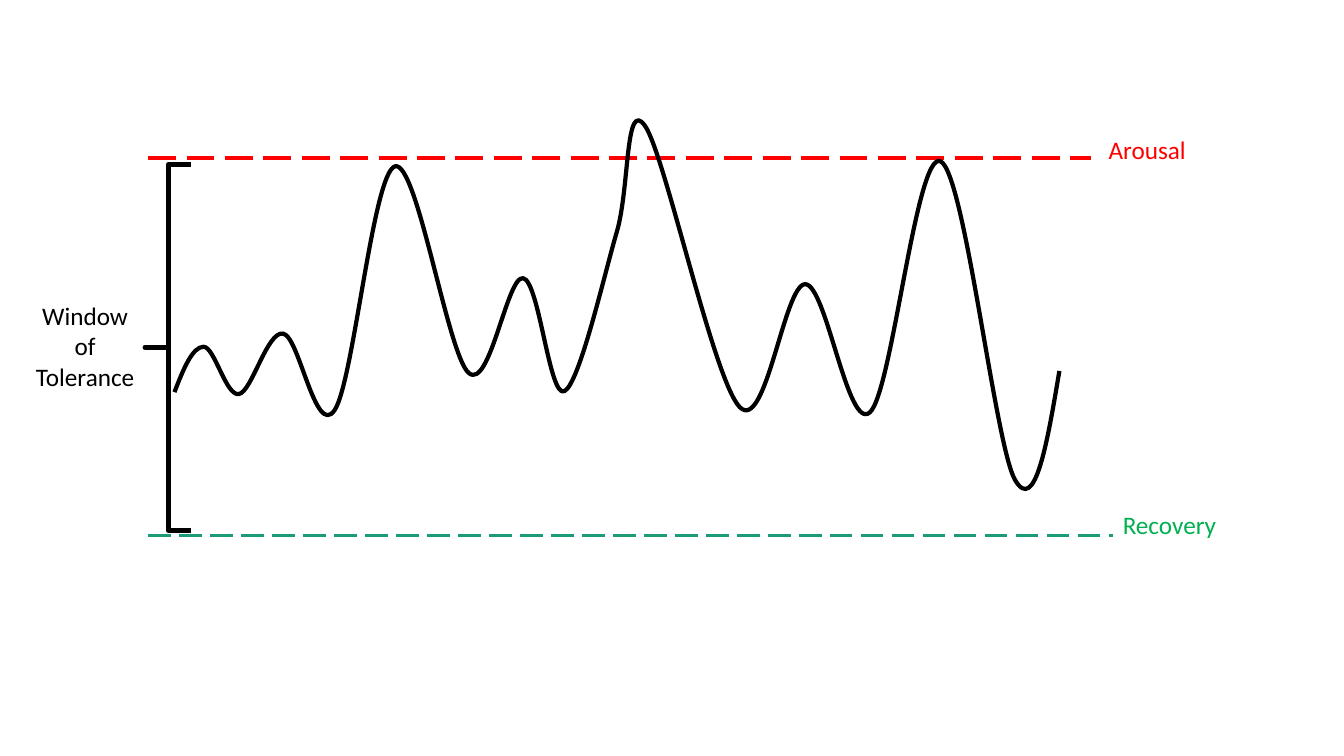
"""Build the window of tolerance slide: two limits, a bracket and an arousal curve."""
from pptx import Presentation
from pptx.dml.color import RGBColor
from pptx.enum.dml import MSO_LINE
from pptx.enum.shapes import MSO_CONNECTOR, MSO_SHAPE
from pptx.enum.text import MSO_AUTO_SIZE, PP_ALIGN
from pptx.oxml.ns import qn
from pptx.util import Pt
from lxml.etree import SubElement

COLORS = {"black": "000000", "red": "FF0000", "teal": "1D9A78", "green": "00B050"}
LIMITS = [
    {"left": 105.8, "right": 779, "y": 113, "color": "red", "width": 2.5},
    {"left": 105.8, "right": 794.9, "y": 382.3, "color": "teal", "width": 2},
]
LABELS = [
    {"text": "Arousal", "area": (784.8, 92.2, 113, 29), "color": "red", "align": PP_ALIGN.LEFT},
    {"text": "Recovery", "area": (794.9, 360, 138.2, 29), "color": "green", "align": PP_ALIGN.LEFT},
    {"text": "Window of Tolerance", "area": (15.8, 211, 90, 72.7), "color": "black",
     "align": PP_ALIGN.CENTER},
]
BRACKET = (103.7, 117.4, 33.1, 261.4)
CURVE_START = (124.6, 280.1)
FIRST_HANDLE = (131, 263.5)
CURVE_TURNS = [
    ((137.5, 247.7), (145.4, 247.7)),
    ((161.3, 283), (170.6, 281.5)),
    ((190.8, 236.2), (202.3, 238.3)),
    ((225.4, 313.2), (239, 293)),
    ((266.4, 123.1), (282.2, 118.8)),
    ((319.7, 253.4), (334.8, 266.4)),
    ((362.2, 196.6), (373.7, 198.7)),
    ((392.4, 285.1), (403.2, 279.4)),
    ((431.3, 197.3), (440.6, 165.6)),
    ((446.4, 69.1), (460.8, 90)),
    ((509.8, 272.2), (528.5, 290.9)),
    ((560.2, 202.3), (575.3, 203)),
    ((605.5, 308.9), (621.4, 294.5)),
    ((654.5, 107.3), (671.8, 115.2)),
    ((710.6, 317.5), (725, 342.7)),
    ((748.1, 316.1), (756.7, 265)),
]
FONT = {"name": "Calibri", "size": Pt(18)}


def rgb(name):
    return RGBColor.from_string(COLORS[name])


def set_line(shape, color, width):
    shape.line.color.rgb = rgb(color)
    shape.line.width = Pt(width)


def set_outline(shape, width):
    shape.shadow.inherit = False
    shape.fill.background()
    set_line(shape, "black", width)


def add_limit(page, limit):
    y = Pt(limit["y"])
    line = page.shapes.add_connector(
        MSO_CONNECTOR.STRAIGHT, Pt(limit["left"]), y, Pt(limit["right"]), y)
    set_line(line, limit["color"], limit["width"])
    line.line.dash_style = MSO_LINE.LONG_DASH
    SubElement(line._element.spPr, qn("a:effectLst"))


def add_label(page, label):
    box = page.shapes.add_textbox(*map(Pt, label["area"]))
    frame = box.text_frame
    frame.word_wrap = True
    frame.auto_size = MSO_AUTO_SIZE.SHAPE_TO_FIT_TEXT
    para = frame.paragraphs[0]
    para.alignment = label["align"]
    span = para.add_run()
    span.text = label["text"]
    for name, value in FONT.items():
        setattr(span.font, name, value)
    span.font.color.rgb = rgb(label["color"])


def add_curve(page):
    """Join the turns smoothly: each outgoing handle mirrors the incoming one."""
    builder = page.shapes.build_freeform(*map(Pt, CURVE_START))
    builder.add_line_segments(
        [tuple(map(Pt, anchor)) for handle, anchor in CURVE_TURNS], close=False)
    curve = builder.convert_to_shape()
    set_outline(curve, 3)
    outgoing = FIRST_HANDLE
    segments = list(curve._element.iter(qn("a:lnTo")))
    for segment, (incoming, anchor) in zip(segments, CURVE_TURNS):
        bezier = segment.makeelement(qn("a:cubicBezTo"))
        for x, y in (outgoing, incoming, anchor):
            SubElement(bezier, qn("a:pt"), x=str(Pt(x) - curve.left), y=str(Pt(y) - curve.top))
        segment.getparent().replace(segment, bezier)
        outgoing = tuple(2 * end - handle for end, handle in zip(anchor, incoming))


def main():
    deck = Presentation()
    deck.slide_width, deck.slide_height = Pt(960), Pt(540)
    page = deck.slides.add_slide(deck.slide_layouts[6])
    for limit in LIMITS:
        add_limit(page, limit)
    for label in LABELS:
        add_label(page, label)
    bracket = page.shapes.add_shape(MSO_SHAPE.LEFT_BRACE, *map(Pt, BRACKET))
    bracket.adjustments[0] = 0
    bracket.adjustments[1] = 0.5
    set_outline(bracket, 3.75)
    add_curve(page)
    deck.save("out.pptx")


if __name__ == "__main__":
    main()
